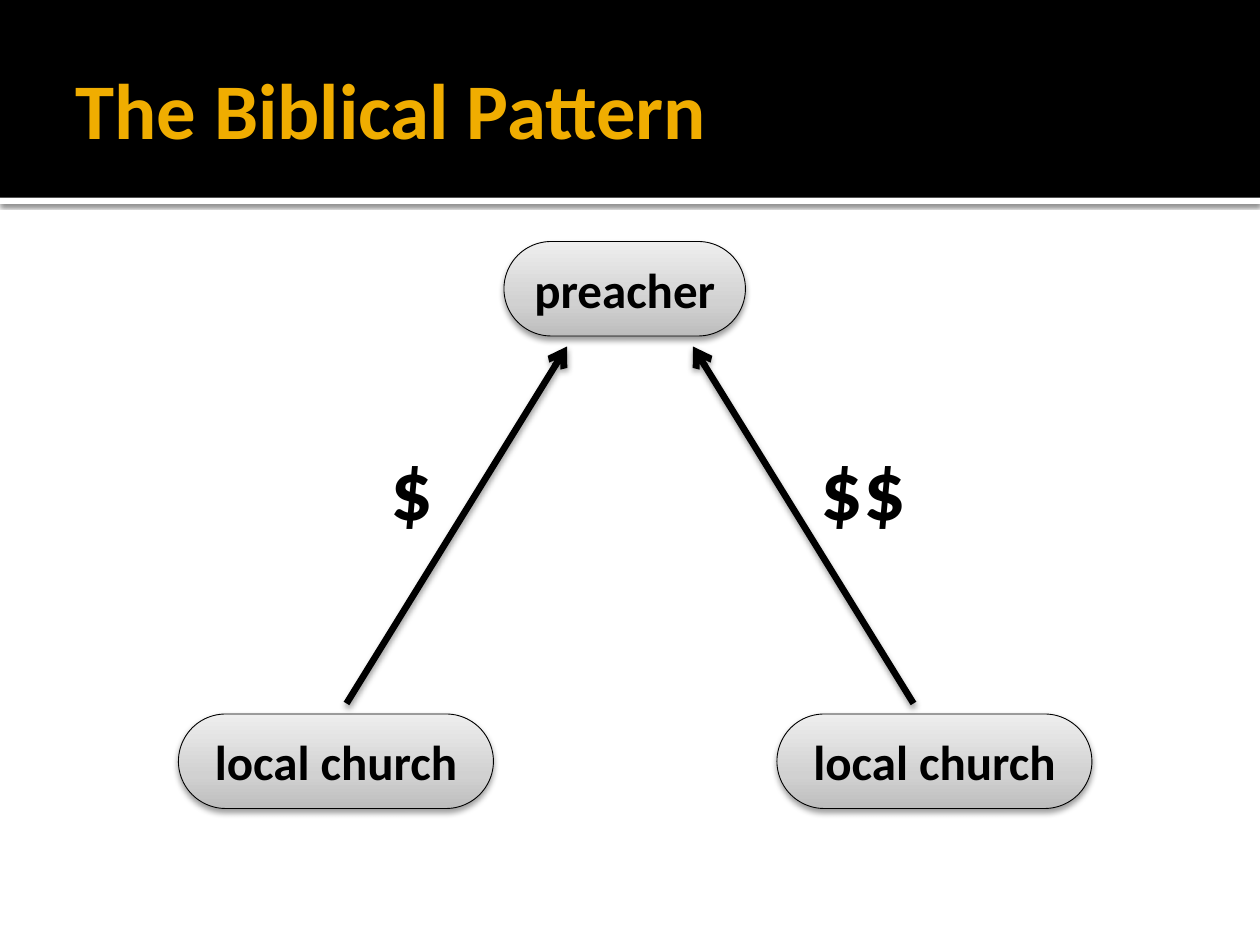
import copy
import lxml.etree
import pptx
import pptx.util
import pptx.dml.color
import pptx.enum.shapes
import pptx.enum.text
import pptx.oxml.ns

Pt = pptx.util.Pt
qn = pptx.oxml.ns.qn
KIND = pptx.enum.shapes.MSO_SHAPE
ALIGN = pptx.enum.text.PP_ALIGN
ANCHOR = pptx.enum.text.MSO_ANCHOR

FONT = "Calibri"
COLORS = {"ink": "000000", "paper": "FFFFFF", "gold": "F0AD00"}
GREYS = [(0, "BDBDBD"), (0.35, "D1D1D1"), (1, "EEEEEE")]

TITLE = "The Biblical Pattern"
BAND = 113
# text, left, top, width
NODES = [
    ("preacher", 288, 138, 138),
    ("local church", 102, 408, 180),
    ("local church", 444, 408, 180),
]
NODE_H = 54
# start x, end x
ARROWS = [(198, 324), (522, 396)]
ARROW_Y = (402, 198)
# text, left, width
SUMS = [("$", 216, 40), ("$$", 462, 65.5)]
SUM_TOP, SUM_H = 246, 65.5

# opacity in percent, blur and distance in points
SOFT = (38, 3.5, 2)
EDGE = (60, 2.5, 0.8)


def rgb(code):
    return pptx.dml.color.RGBColor.from_string(code)


def write(shape, text, size, color, align=ALIGN.LEFT):
    para = shape.text_frame.paragraphs[0]
    para.text = text
    para.alignment = align
    font = para.runs[0].font
    font.name, font.size, font.bold = FONT, Pt(size), True
    font.color.rgb = rgb(color)


def shade(shape, look):
    """Cast a shadow straight down; call after the line is set."""
    alpha, blur, dist = look
    props = shape.element.spPr
    group = props.find(qn("a:effectLst"))
    if group is None:
        group = lxml.etree.SubElement(props, qn("a:effectLst"))
    cast = lxml.etree.SubElement(
        group, qn("a:outerShdw"), blurRad=str(Pt(blur)), dist=str(Pt(dist)),
        dir="5400000", algn="ctr", rotWithShape="0")
    tint = lxml.etree.SubElement(cast, qn("a:srgbClr"), val=COLORS["ink"])
    lxml.etree.SubElement(tint, qn("a:alpha"), val=str(alpha * 1000))


def add_band(slide, top, height, color):
    band = slide.shapes.add_shape(KIND.RECTANGLE, 0, Pt(top), Pt(720), Pt(height))
    band.fill.solid()
    band.fill.fore_color.rgb = rgb(color)
    band.line.fill.background()
    band.shadow.inherit = False
    return band


def add_title(slide):
    title = slide.shapes.title
    title.left, title.top, title.width, title.height = map(Pt, (36, 12, 648, 99))
    frame = title.text_frame
    frame.vertical_anchor = ANCHOR.MIDDLE
    frame.margin_left = Pt(7.2)
    frame.margin_right = frame.margin_top = frame.margin_bottom = Pt(3.6)
    write(title, TITLE, 45, COLORS["gold"])
    slide.shapes.element.append(title.element)  # bring in front of the bands


def add_node(slide, text, left, top, width):
    node = slide.shapes.add_shape(
        KIND.ROUNDED_RECTANGLE, Pt(left), Pt(top), Pt(width), Pt(NODE_H))
    node.adjustments[0] = 0.5
    node.fill.gradient()
    node.fill.gradient_angle = 90
    stops = node.element.spPr.find(".//" + qn("a:gsLst"))
    stops.insert(1, copy.deepcopy(stops[0]))
    for stop, (place, grey) in zip(node.fill.gradient_stops, GREYS):
        stop.position = place
        stop.color.rgb = rgb(grey)
    node.line.color.rgb = rgb(COLORS["ink"])
    node.line.width = Pt(0.5)
    node.shadow.inherit = False
    shade(node, SOFT)
    node.text_frame.vertical_anchor = ANCHOR.MIDDLE
    write(node, text, 28, COLORS["ink"], ALIGN.CENTER)


def add_arrow(slide, start, end):
    arrow = slide.shapes.add_connector(
        pptx.enum.shapes.MSO_CONNECTOR.STRAIGHT,
        Pt(start), Pt(ARROW_Y[0]), Pt(end), Pt(ARROW_Y[1]))
    arrow.line.color.rgb = rgb(COLORS["ink"])
    arrow.line.width = Pt(3.78)
    line = arrow.element.spPr.find(qn("a:ln"))
    lxml.etree.SubElement(line, qn("a:tailEnd"), type="arrow")
    shade(arrow, SOFT)


def add_sum(slide, text, left, width):
    box = slide.shapes.add_textbox(Pt(left), Pt(SUM_TOP), Pt(width), Pt(SUM_H))
    box.text_frame.word_wrap = False
    box.text_frame.auto_size = pptx.enum.text.MSO_AUTO_SIZE.SHAPE_TO_FIT_TEXT
    write(box, text, 48, COLORS["ink"])


def main():
    deck = pptx.Presentation()
    deck.slide_width, deck.slide_height = Pt(720), Pt(540)
    slide = deck.slides.add_slide(deck.slide_layouts[5])
    strip = add_band(slide, BAND, 3.6, COLORS["paper"])
    shade(strip, EDGE)
    add_band(slide, 0, BAND, COLORS["ink"])
    add_title(slide)
    for node in NODES:
        add_node(slide, *node)
    for arrow in ARROWS:
        add_arrow(slide, *arrow)
    for item in SUMS:
        add_sum(slide, *item)
    deck.save("out.pptx")


if __name__ == "__main__":
    main()
